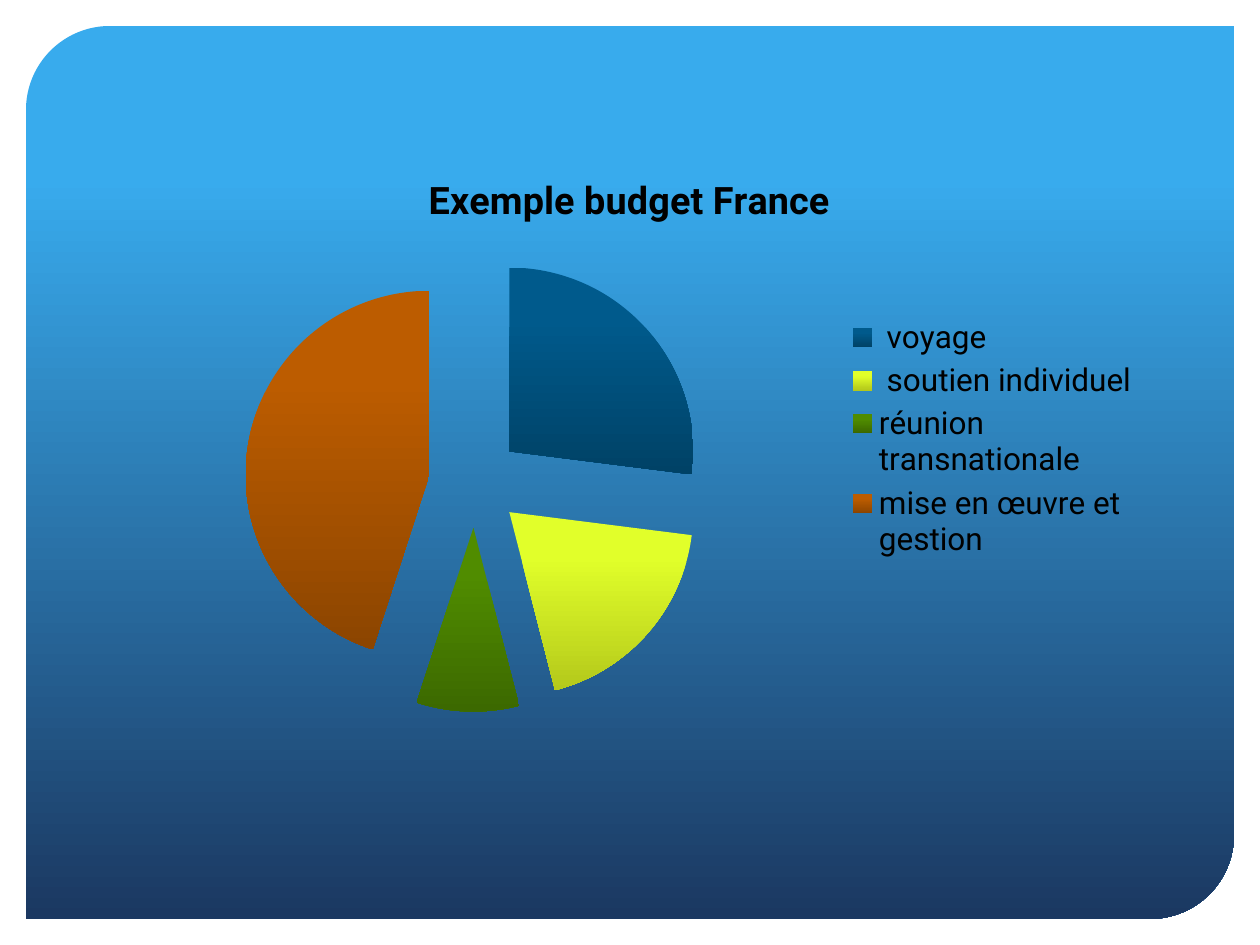
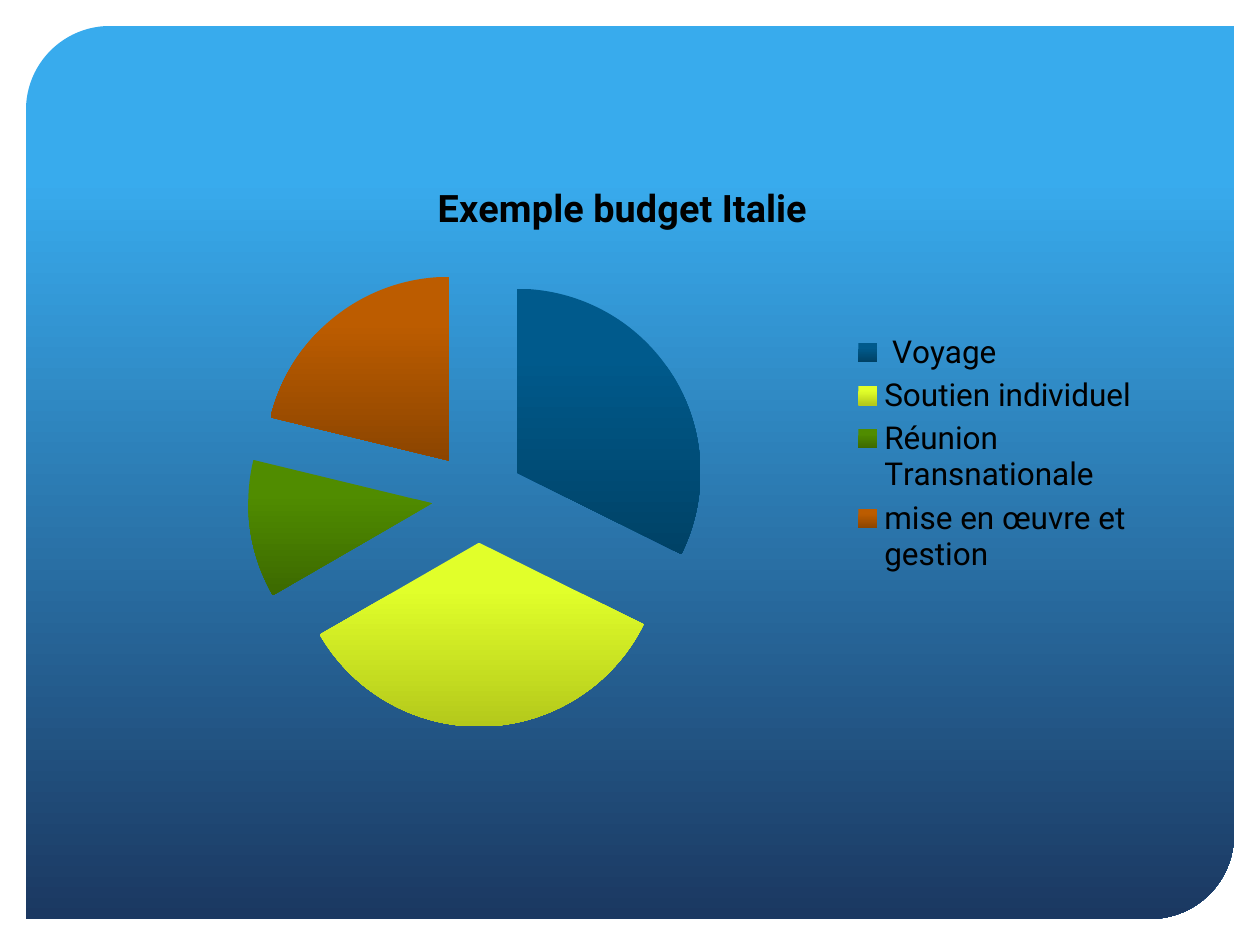
from lxml import etree
from pptx import Presentation
from pptx import util as u
from pptx.chart.data import CategoryChartData
from pptx.dml.color import RGBColor
from pptx.enum import chart as ch, shapes
from pptx.oxml.ns import qn

PX_PER_INCH = 126
FONT = "Roboto"
COLORS = {
    "text": "000000",
    "panel": ("38ABED", "1B3861"),
    "voyage": ("005A8C", "004266"),
    "soutien": ("E1FF2A", "B4C91B"),
    "reunion": ("508C00", "3C6900"),
    "gestion": ("BC5C00", "8C4500"),
}
SLICES = ("voyage", "soutien", "reunion", "gestion")
EXPLOSION = 25


def px(n):
    return u.Inches(n / PX_PER_INCH)


def add_xml(parent, tag, **attrs):
    """Append a chart element and return it."""
    return etree.SubElement(parent, qn(tag), attrs)


class Deck:
    def __init__(self):
        self.prs = Presentation()
        self.prs.slide_width, self.prs.slide_height = px(1260), px(945)
        self.layout = self.prs.slide_layouts[6]
        self.slide = None

    def add_slide(self):
        self.slide = self.prs.slides.add_slide(self.layout)

    def gradient(self, fill, name, start):
        """Fill from top to bottom, holding the first colour until start."""
        fill.gradient()
        fill.gradient_angle = 270
        for stop, color, position in zip(fill.gradient_stops, COLORS[name], (start, 1)):
            stop.color.rgb = RGBColor.from_string(color)
            stop.position = position

    def style_font(self, font, size, bold=False):
        font.name, font.size, font.bold = FONT, u.Pt(size), bold
        font.color.rgb = RGBColor.from_string(COLORS["text"])

    def panel(self):
        """Draw the rounded panel and hand it to the shared layout."""
        sp = self.slide.shapes.add_shape(
            shapes.MSO_SHAPE.ROUND_2_DIAG_RECTANGLE, px(26), px(26), px(1208), px(893))
        sp.adjustments[0], sp.adjustments[1] = 0.094, 0
        sp.shadow.inherit = False
        sp.line.fill.background()
        self.gradient(sp.fill, "panel", 0.17)
        self.layout.shapes.element.insert(2, sp.element)

    def pie(self, title, categories, values, top, title_at=None):
        data = CategoryChartData()
        data.categories = categories
        data.add_series(title, values)
        chart = self.slide.shapes.add_chart(
            ch.XL_CHART_TYPE.PIE, px(107), px(top), px(1045), px(580), data).chart
        self.style_font(chart.font, 18)
        self.chart_title(chart, title, title_at)
        chart.has_legend = True
        chart.legend.position = ch.XL_LEGEND_POSITION.RIGHT
        chart.legend.include_in_layout = False
        self.style_font(chart.legend.font, 18)

        plot = chart.plots[0]
        plot.vary_by_categories = True
        series = plot.series[0]
        for i, name in enumerate(SLICES):
            point = series.points[i].format
            self.gradient(point.fill, name, 0.25)
            point.line.fill.background()
        explosion = add_xml(series.format.fill and series.points[0] and
                            chart.element.find(".//" + qn("c:ser")),
                            "c:explosion", val=str(EXPLOSION))
        chart.element.find(".//" + qn("c:dPt")).addprevious(explosion)

    def chart_title(self, chart, title, at):
        """Write the title, at a fraction of the chart's size if given."""
        chart.has_title = True
        tf = chart.chart_title.text_frame
        tf.text = title
        self.style_font(tf.paragraphs[0].font, 21.6, bold=True)
        if at:
            element = chart.chart_title.element
            for old in element.findall(qn("c:layout")):
                element.remove(old)
            layout = add_xml(element, "c:layout")
            element.find(qn("c:tx")).addnext(layout)
            manual = add_xml(layout, "c:manualLayout")
            for axis in "xy":
                add_xml(manual, f"c:{axis}Mode", val="edge")
            for axis, fraction in zip("xy", at):
                add_xml(manual, f"c:{axis}", val=str(fraction))


def main():
    deck = Deck()
    deck.add_slide()
    deck.panel()
    deck.pie("Exemple budget France",
             (" voyage", " soutien individuel", "réunion transnationale",
              "mise en œuvre et gestion"),
             (27, 19, 9, 45), top=149)
    deck.add_slide()
    deck.pie("Exemple budget Italie",
             (" Voyage", "Soutien individuel", "Réunion Transnationale",
              "mise en œuvre et gestion"),
             (32, 34, 12, 21), top=164, title_at=(0.31, 0.02))
    deck.prs.save("out.pptx")


if __name__ == "__main__":
    main()
